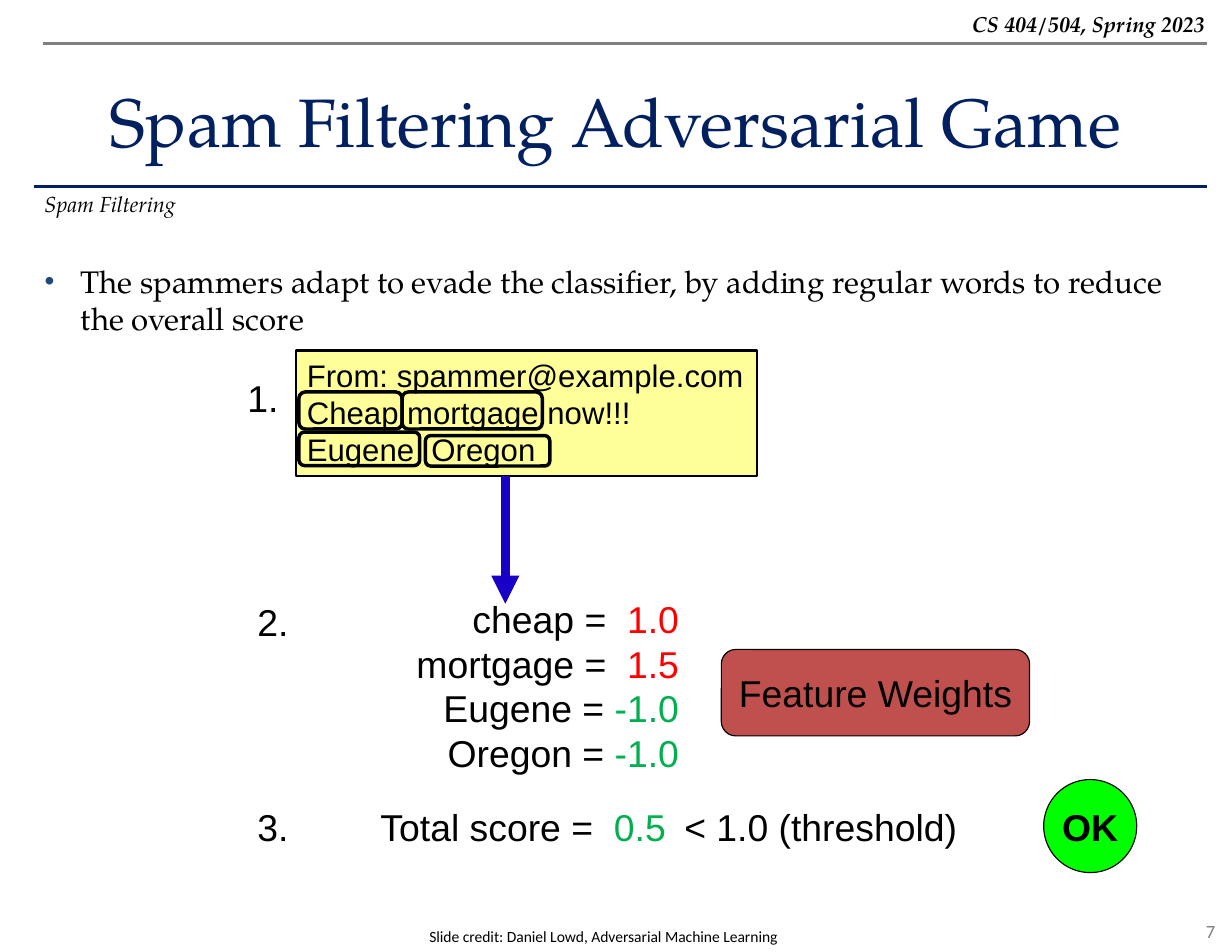
from dataclasses import dataclass
from typing import Optional

from lxml.etree import SubElement
from pptx import Presentation
from pptx.dml.color import RGBColor
from pptx.enum.shapes import MSO_CONNECTOR, MSO_SHAPE
from pptx.enum.text import MSO_ANCHOR, MSO_AUTO_SIZE, PP_ALIGN
from pptx.oxml.ns import qn
from pptx.util import Cm, Pt

BLACK = RGBColor(0x00, 0x00, 0x00)
GRAY = RGBColor(0x80, 0x80, 0x80)
NAVY = RGBColor(0x00, 0x20, 0x60)
BULLET_BLUE = RGBColor(0x1F, 0x49, 0x7D)
ARROW_BLUE = RGBColor(0x18, 0x00, 0xC6)
RED = RGBColor(0xFF, 0x00, 0x00)
GREEN = RGBColor(0x00, 0xB0, 0x50)
OK_GREEN = RGBColor(0x00, 0xFF, 0x00)
BRICK = RGBColor(0xC0, 0x50, 0x4D)
PALE_YELLOW = RGBColor(0xFF, 0xFF, 0x99)

SERIF = "TeX Gyre Pagella"
SANS = "Arial"
SMALL = "Calibri"


@dataclass(frozen=True)
class Box:
    left: float
    top: float
    width: float
    height: float

    def lengths(self) -> tuple:
        return Cm(self.left), Cm(self.top), Cm(self.width), Cm(self.height)


@dataclass(frozen=True)
class Style:
    font: str = SANS
    size: float = 24
    bold: bool = False
    italic: bool = False
    align: PP_ALIGN = PP_ALIGN.LEFT
    color: RGBColor = BLACK


@dataclass(frozen=True)
class Piece:
    text: str
    color: Optional[RGBColor] = None


@dataclass(frozen=True)
class Label:
    box: Box
    lines: list
    style: Style = Style()
    wrap: bool = False


def add_piece(paragraph, piece: Piece, style: Style) -> None:
    run = paragraph.add_run()
    run.text = piece.text
    font = run.font
    font.name = style.font
    font.size = Pt(style.size)
    font.bold = style.bold
    font.italic = style.italic
    font.color.rgb = piece.color or style.color


def write(frame, lines: list, style: Style) -> None:
    for index, pieces in enumerate(lines):
        paragraph = frame.add_paragraph() if index else frame.paragraphs[0]
        paragraph.alignment = style.align
        for piece in pieces:
            add_piece(paragraph, piece, style)


def add_label(slide, label: Label) -> None:
    frame = slide.shapes.add_textbox(*label.box.lengths()).text_frame
    frame.word_wrap = label.wrap
    write(frame, label.lines, label.style)


def add_outlined(slide, kind: MSO_SHAPE, box: Box, weight: float,
                 fill: Optional[RGBColor] = None):
    shape = slide.shapes.add_shape(kind, *box.lengths())
    shape.shadow.inherit = False
    if fill is None:
        shape.fill.background()
    else:
        shape.fill.solid()
        shape.fill.fore_color.rgb = fill
    shape.line.color.rgb = BLACK
    shape.line.width = Pt(weight)
    return shape


def add_badge(slide, kind: MSO_SHAPE, box: Box, fill: RGBColor, text: str, style: Style) -> None:
    frame = add_outlined(slide, kind, box, 0.75, fill).text_frame
    frame.word_wrap = False
    frame.vertical_anchor = MSO_ANCHOR.MIDDLE
    write(frame, [[Piece(text)]], style)


def add_line(slide, start: tuple, end: tuple, color: RGBColor, weight: float):
    line = slide.shapes.add_connector(
        MSO_CONNECTOR.STRAIGHT, Cm(start[0]), Cm(start[1]), Cm(end[0]), Cm(end[1]))
    line.line.color.rgb = color
    line.line.width = Pt(weight)
    SubElement(line._element.spPr, qn("a:effectLst"))
    return line


def place(placeholder, box: Box):
    placeholder.left, placeholder.top, placeholder.width, placeholder.height = box.lengths()
    frame = placeholder.text_frame
    frame.word_wrap = True
    frame.auto_size = MSO_AUTO_SIZE.NONE
    return frame


def add_bullet(paragraph) -> None:
    properties = paragraph._p.get_or_add_pPr()
    properties.set("marL", str(Cm(0.81)))
    properties.set("indent", str(-Cm(0.81)))
    color = SubElement(properties, qn("a:buClr"))
    SubElement(color, qn("a:srgbClr"), val=str(BULLET_BLUE))
    SubElement(properties, qn("a:buSzPct"), val="90000")
    SubElement(properties, qn("a:buFont"), typeface=SANS)
    SubElement(properties, qn("a:buChar"), char="•")


def add_header(slide) -> None:
    add_line(slide, (0.76, 4.22), (27.38, 4.22), NAVY, 2)
    add_line(slide, (0.97, 0.99), (27.38, 0.99), GRAY, 1.5)
    title = place(slide.shapes.title, Box(0, 1.27, 27.94, 2.92))
    title.vertical_anchor = MSO_ANCHOR.MIDDLE
    write(title, [[Piece("Spam Filtering Adversarial Game")]],
          Style(SERIF, 44, align=PP_ALIGN.CENTER, color=NAVY))
    body = place(slide.placeholders[1], Box(0.76, 5.82, 26.62, 14.91))
    add_bullet(body.paragraphs[0])
    write(body, [[Piece("The spammers adapt to evade the classifier, by adding regular words "
                        "to reduce the overall score")]], Style(SERIF, 20))


def add_email(slide) -> None:
    style = Style(size=20)
    frame = add_outlined(slide, MSO_SHAPE.RECTANGLE, Box(6.71, 7.95, 10.46, 2.84),
                         1.5, PALE_YELLOW).text_frame
    frame.word_wrap = True
    frame.vertical_anchor = MSO_ANCHOR.TOP
    write(frame, [[Piece("From: spammer@example.com")], [Piece("Cheap mortgage now!!!")]], style)
    message = frame.paragraphs[1]
    message.add_line_break()
    add_piece(message, Piece("Eugene  Oregon"), style)

    word_frames = [
        Box(6.78, 8.89, 2.34, 0.84),
        Box(9.12, 8.89, 3.18, 0.84),
        Box(6.78, 9.8, 2.74, 0.76),
        Box(9.65, 9.88, 2.82, 0.69),
    ]
    for box in word_frames:
        add_outlined(slide, MSO_SHAPE.ROUNDED_RECTANGLE, box, 2.25)

    arrow = add_line(slide, (11.46, 10.8), (11.46, 13.69), ARROW_BLUE, 6)
    SubElement(arrow.line._get_or_add_ln(), qn("a:tailEnd"), type="triangle")


def main() -> None:
    presentation = Presentation()
    presentation.slide_width = Cm(27.94)
    presentation.slide_height = Cm(21.59)
    slide = presentation.slides.add_slide(presentation.slide_layouts[1])

    add_header(slide)
    add_email(slide)

    weights = [
        [Piece("cheap =  "), Piece("1.0", RED)],
        [Piece("mortgage =  "), Piece("1.5", RED)],
        [Piece("Eugene ="), Piece(" -1.0", GREEN)],
        [Piece("Oregon ="), Piece(" -1.0", GREEN)],
    ]
    total = [[Piece("Total score =  "), Piece("0.5", GREEN)]]
    labels = [
        Label(Box(0.3, 0.13, 27.28, 0.86), [[Piece("CS 404/504, Spring 2023")]],
              Style(SERIF, 14, True, True, PP_ALIGN.RIGHT), True),
        Label(Box(0.76, 4.19, 17.2, 0.97), [[Piece("Spam Filtering")]],
              Style(SERIF, 14, italic=True), True),
        Label(Box(9.12, 13.39, 6.53, 4.37), weights, Style(align=PP_ALIGN.RIGHT)),
        Label(Box(8.38, 18.11, 7.09, 1.27), total),
        Label(Box(15.27, 18.11, 6.71, 1.27), [[Piece("< 1.0 (threshold)")]]),
        Label(Box(3.18, 20.9, 21.01, 0.69),
              [[Piece("Slide credit: Daniel Lowd, Adversarial Machine Learning")]],
              Style(SMALL, 10, align=PP_ALIGN.CENTER), True),
        Label(Box(24.74, 20.73, 3.07, 0.76), [[Piece("7")]],
              Style(SMALL, 12, align=PP_ALIGN.RIGHT, color=GRAY), True),
    ]
    step_corners = [(5.36, 8.38), (5.59, 13.46), (5.59, 18.11)]
    for number, (left, top) in enumerate(step_corners, start=1):
        labels.append(Label(Box(left, top, 1.22, 1.27), [[Piece(f"{number}.")]]))
    for label in labels:
        add_label(slide, label)

    add_badge(slide, MSO_SHAPE.ROUNDED_RECTANGLE, Box(16.36, 14.73, 6.99, 1.96), BRICK,
              "Feature Weights", Style(align=PP_ALIGN.CENTER))
    add_badge(slide, MSO_SHAPE.OVAL, Box(23.67, 17.68, 2.11, 2.11), OK_GREEN,
              "OK", Style(bold=True, align=PP_ALIGN.CENTER))

    presentation.save("out.pptx")


if __name__ == "__main__":
    main()
